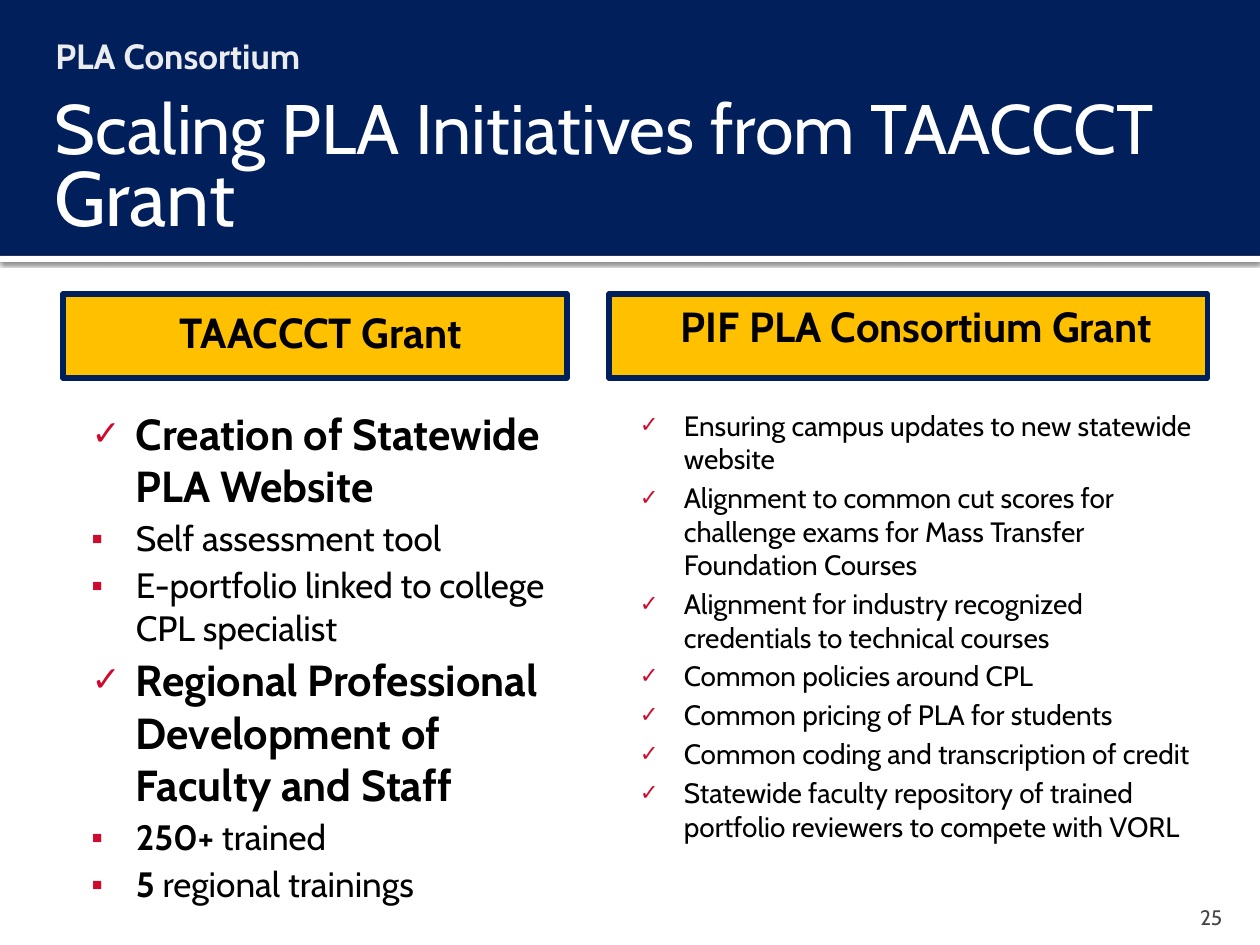
"""Builds a slide comparing the TAACCCT grant with the PIF PLA consortium grant."""
from dataclasses import dataclass

import lxml.etree
import pptx
import pptx.dml.color
import pptx.enum.shapes
import pptx.enum.text
import pptx.oxml.ns
import pptx.util

Pt = pptx.util.Pt
qn = pptx.oxml.ns.qn
Align = pptx.enum.text.PP_ALIGN
Anchor = pptx.enum.text.MSO_ANCHOR


@dataclass(frozen=True)
class Theme:
    font: str = "Cabin"
    navy: str = "001F5B"
    white: str = "FFFFFF"
    gold: str = "FFC000"
    black: str = "000000"
    red: str = "CF0A2C"
    pale: str = "EAECEE"
    grey: str = "454545"
    title: float = 40
    title_end: float = 44
    label: float = 24
    kicker: float = 20
    head: float = 24.8
    point: float = 20.1
    small: float = 16
    number: float = 12


THEME = Theme()
CHECK, SQUARE = "✓", "▪"
INSETS = (7.2, 3.6, 7.2, 3.6)
HANGING = (34.56, -25.2)

KICKER = "PLA Consortium"
TITLE = [("Scaling PLA Initiatives from TAACCCT ", THEME.title, False),
         ("Grant", THEME.title_end, False)]
PAGE_NUMBER = "25"


def heading(text):
    return CHECK, [(text, THEME.head, True)]


def point(text, lead=""):
    spans = [(lead, THEME.point, True)] if lead else []
    return SQUARE, spans + [(text, THEME.point, False)]


TAACCCT = [
    heading("Creation of Statewide PLA Website"),
    point("Self assessment tool"),
    point("E-portfolio linked to college CPL specialist"),
    heading("Regional Professional Development of Faculty and Staff"),
    point("trained", "250+ "),
    point("regional trainings", "5 "),
]
CONSORTIUM = [(CHECK, [(text, THEME.small, False)]) for text in (
    "Ensuring campus updates to new statewide website",
    "Alignment to common cut scores for challenge exams for Mass Transfer Foundation Courses",
    "Alignment for industry recognized credentials to technical courses",
    "Common policies around CPL",
    "Common pricing of PLA for students",
    "Common coding and transcription of credit",
    "Statewide faculty repository of trained portfolio reviewers to compete with VORL",
)]
COLUMNS = [
    ("TAACCCT Grant", (36, 168, 288, 48), (4.32, 7.2, 7.2, 3.6),
     TAACCCT, (36, 229, 288, 293)),
    ("PIF PLA Consortium Grant", (348, 168, 342, 48), INSETS,
     CONSORTIUM, (349.2, 229.7, 342, 292.3)),
]


def rgb(value):
    return pptx.dml.color.RGBColor.from_string(value)


def child(parent, tag, **attributes):
    return lxml.etree.SubElement(parent, qn(tag), {k: str(v) for k, v in attributes.items()})


def add_block(page, place, fill):
    box = page.shapes.add_shape(pptx.enum.shapes.MSO_SHAPE.RECTANGLE, *map(Pt, place))
    box.shadow.inherit = False
    box.fill.solid()
    box.fill.fore_color.rgb = rgb(fill)
    box.line.fill.background()
    return box


def add_shadow(box):
    effects = box._element.spPr.find(qn("a:effectLst"))
    shadow = child(effects, "a:outerShdw", blurRad=Pt(2.5), dist=Pt(0.8),
                   dir=5400000, algn="t", rotWithShape=0)
    color = child(shadow, "a:srgbClr", val=THEME.black)
    child(color, "a:alpha", val=60000)


def set_frame(box, insets=INSETS, anchor=Anchor.TOP):
    frame = box.text_frame
    frame.word_wrap = True
    frame.vertical_anchor = anchor
    (frame.margin_left, frame.margin_top,
     frame.margin_right, frame.margin_bottom) = map(Pt, insets)
    return frame


def add_frame(page, place, insets=INSETS, anchor=Anchor.TOP):
    return set_frame(page.shapes.add_textbox(*map(Pt, place)), insets, anchor)


def write(para, spans, color, align=Align.LEFT, indent=(0, 0)):
    para.alignment = align
    properties = para._p.get_or_add_pPr()
    properties.set("marL", str(Pt(indent[0])))
    properties.set("indent", str(Pt(indent[1])))
    for text, size, bold in spans:
        span = para.add_run()
        span.text = text
        span.font.name = THEME.font
        span.font.size = Pt(size)
        span.font.bold = bold
        span.font.color.rgb = rgb(color)


def add_bullet(para, mark):
    properties = para._p.get_or_add_pPr()
    child(child(properties, "a:buClr"), "a:srgbClr", val=THEME.red)
    child(properties, "a:buSzPct", val=80000)
    child(properties, "a:buFont", typeface=THEME.font)
    child(properties, "a:buChar", char=mark)


def add_header(page):
    add_block(page, (0, 0, 720, 149.76), THEME.navy)
    add_shadow(add_block(page, (0, 146.16, 720, 3.6), THEME.white))
    frame = add_frame(page, (18, 12.24, 672.48, 36), (4.32, 7.2, 7.2, 3.6))
    write(frame.paragraphs[0], [(KICKER, THEME.kicker, True)], THEME.pale, indent=HANGING)
    frame = add_frame(page, (24, 48, 660, 96), (7.2, 3.6, 3.6, 3.6), Anchor.MIDDLE)
    frame.paragraphs[0].line_spacing = Pt(42)
    write(frame.paragraphs[0], TITLE, THEME.white)


def add_column(page, label, label_place, insets, items, list_place):
    box = add_block(page, label_place, THEME.gold)
    box.line.color.rgb = rgb(THEME.navy)
    box.line.width = Pt(3)
    write(set_frame(box, insets).paragraphs[0], [(label, THEME.label, True)],
          THEME.black, Align.CENTER, (9.36, 0))
    frame = add_frame(page, list_place)
    for index, (mark, spans) in enumerate(items):
        para = frame.add_paragraph() if index else frame.paragraphs[0]
        para.space_after = Pt(3)
        write(para, spans, THEME.black, indent=HANGING)
        add_bullet(para, mark)


def main():
    deck = pptx.Presentation()
    deck.slide_width, deck.slide_height = Pt(720), Pt(540)
    page = deck.slides.add_slide(deck.slide_layouts[6])
    add_header(page)
    for column in COLUMNS:
        add_column(page, *column)
    frame = add_frame(page, (648, 509.76, 57.6, 21.6), (7.2, 3.6, 7.2, 0), Anchor.BOTTOM)
    write(frame.paragraphs[0], [(PAGE_NUMBER, THEME.number, False)], THEME.grey, Align.RIGHT)
    deck.save("out.pptx")


if __name__ == "__main__":
    main()
